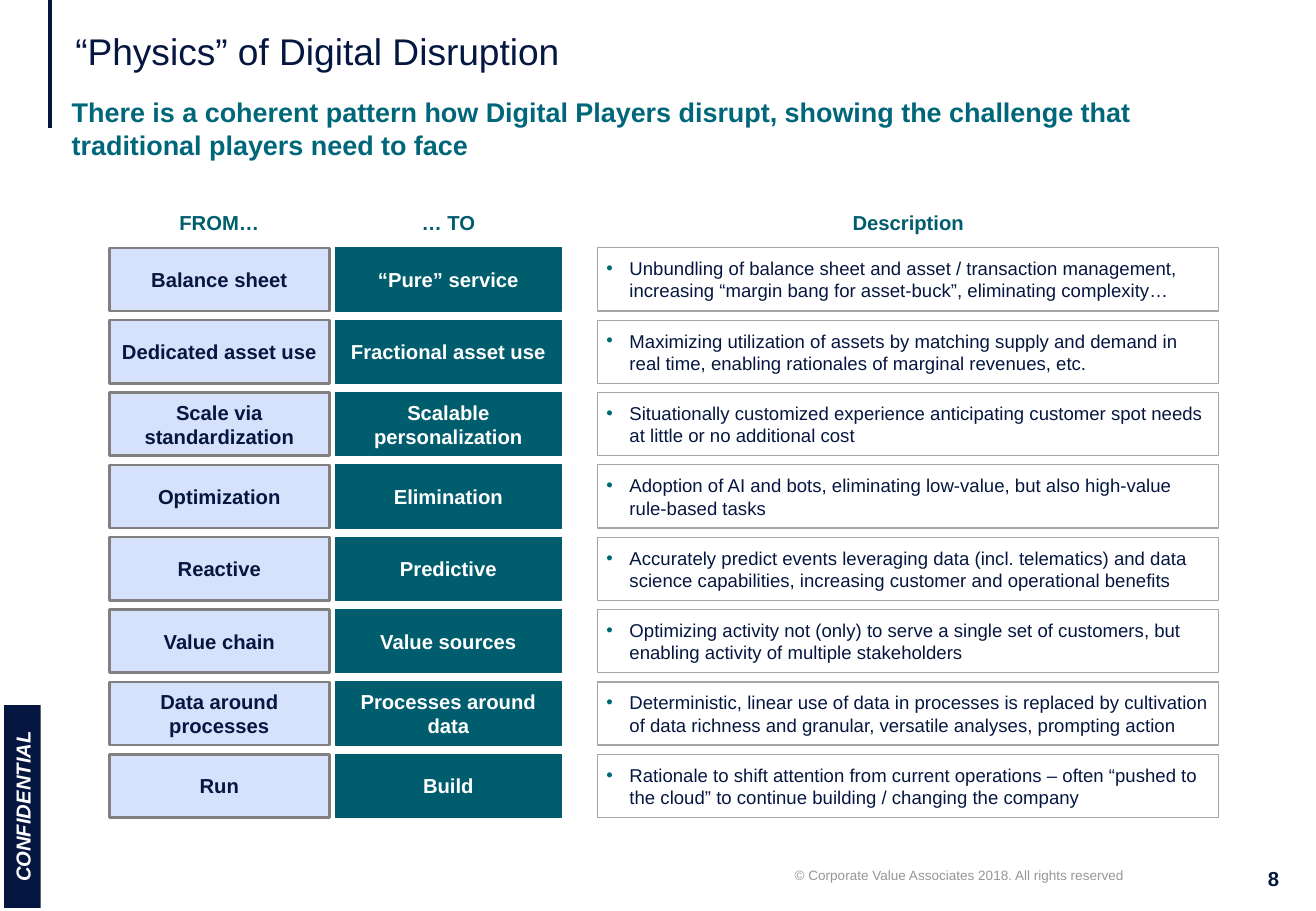
import pptx
import pptx.dml.color
import pptx.enum.shapes
import pptx.enum.text
import pptx.oxml.ns
import pptx.util
import lxml.etree

ALIGN = pptx.enum.text.PP_ALIGN
ANCHOR = pptx.enum.text.MSO_ANCHOR
RECT = pptx.enum.shapes.MSO_SHAPE.RECTANGLE
Inches = pptx.util.Inches

# Colours and type sizes
THEME = {
    "font": "Arial", "navy": "051640", "teal": "005D6E", "accent": "00677A",
    "pale": "D6E1FC", "white": "FFFFFF", "grey": "808080", "rule": "A6A6A6",
    "muted": "969696",
    "title": 22, "subtitle": 16, "label": 12, "text": 11, "footer": 8,
}


def rgb(name):
    return pptx.dml.color.RGBColor.from_string(THEME[name])


def write(sp, text, size="label", color="navy", bold=False, italic=False,
          align=ALIGN.CENTER, anchor=ANCHOR.MIDDLE, insets=(0.1, 0.05, 0.1, 0.05),
          wrap=True, spacing=1.0, bullet=False):
    tf = sp.text_frame
    tf.auto_size = pptx.enum.text.MSO_AUTO_SIZE.NONE
    tf.word_wrap = wrap
    tf.vertical_anchor = anchor
    tf.margin_left, tf.margin_top, tf.margin_right, tf.margin_bottom = map(Inches, insets)
    p = tf.paragraphs[0]
    p.alignment = align
    p.line_spacing = spacing
    p.space_before = 0
    pPr = p._p.get_or_add_pPr()
    indent = Inches(0.19) if bullet else 0
    pPr.set("marL", str(indent))
    pPr.set("indent", str(-indent))
    qn = pptx.oxml.ns.qn
    if bullet:
        buClr = lxml.etree.SubElement(pPr, qn("a:buClr"))
        lxml.etree.SubElement(buClr, qn("a:srgbClr"), val=THEME["accent"])
        lxml.etree.SubElement(pPr, qn("a:buFont"), typeface=THEME["font"])
        lxml.etree.SubElement(pPr, qn("a:buChar"), char="•")
    else:
        lxml.etree.SubElement(pPr, qn("a:buNone"))
    r = p.add_run()
    r.text = text
    r.font.name = THEME["font"]
    r.font.size = pptx.util.Pt(THEME[size])
    r.font.color.rgb = rgb(color)
    r.font.bold = bold
    r.font.italic = italic


prs = pptx.Presentation()
prs.slide_width, prs.slide_height = Inches(10.83), Inches(7.5)
slide = prs.slides.add_slide(prs.slide_layouts[1])
shapes = slide.shapes

# Title and subtitle
title, subtitle = shapes.title, slide.placeholders[1]
title.left, title.top, title.width, title.height = map(Inches, (0.62, 0, 10.08, 0.88))
write(title, "“Physics” of Digital Disruption", size="title", align=ALIGN.LEFT,
      insets=(0, 0.05, 0.1, 0.05), spacing=0.9)
subtitle.left, subtitle.top, subtitle.width, subtitle.height = map(
    Inches, (0.49, 0.74, 9.85, 0.82))
write(subtitle, "There is a coherent pattern how Digital Players disrupt, showing the "
      "challenge that traditional players need to face", size="subtitle",
      color="accent", bold=True, align=ALIGN.LEFT, anchor=ANCHOR.TOP)

# Rule beside the title
rule = shapes.add_connector(pptx.enum.shapes.MSO_CONNECTOR.STRAIGHT,
                            Inches(0.41), 0, Inches(0.41), Inches(1.05))
rule.line.color.rgb = rgb("navy")
rule.line.width = pptx.util.Pt(2.25)
lxml.etree.SubElement(rule._element.spPr, pptx.oxml.ns.qn("a:effectLst"))

# Confidential tab, turned to read upwards
tab = shapes.add_shape(RECT, *map(Inches, (-0.65, 6.49, 1.67, 0.3)))
tab.rotation = 270
tab.shadow.inherit = False
tab.fill.solid()
tab.fill.fore_color.rgb = rgb("navy")
tab.line.fill.background()
write(tab, "CONFIDENTIAL", color="white", bold=True, italic=True)

# Footer and page number
footer = shapes.add_textbox(*map(Inches, (6.2, 7.14, 3.15, 0.23)))
write(footer, "© Corporate Value Associates 2018. All rights reserved", size="footer",
      color="muted", align=ALIGN.RIGHT, anchor=ANCHOR.TOP,
      insets=(0.1, 0, 0.1, 0.05), wrap=False)
number = shapes.add_textbox(*map(Inches, (10.17, 6.97, 0.62, 0.53)))
write(number, "8", bold=True)

# Columns: heading, left, width, fill, line, line width, text format
narrow, wide = (0.03,) * 4, (0.07, 0.04, 0.07, 0.04)
columns = [
    ("FROM…", 0.9, 1.81, "pale", "grey", 1.5, dict(bold=True, insets=narrow)),
    ("… TO", 2.76, 1.86, "teal", "teal", 0.75,
     dict(bold=True, color="white", insets=wide)),
    ("Description", 4.92, 5.11, None, "rule", 0.75,
     dict(size="text", align=ALIGN.LEFT, insets=wide, bullet=True)),
]
rows = [
    ("Balance sheet", "“Pure” service",
     "Unbundling of balance sheet and asset / transaction management, increasing "
     "“margin bang for asset-buck”, eliminating complexity…"),
    ("Dedicated asset use", "Fractional asset use",
     "Maximizing utilization of assets by matching supply and demand in real time, "
     "enabling rationales of marginal revenues, etc."),
    ("Scale via standardization", "Scalable personalization",
     "Situationally customized experience anticipating customer spot needs at little "
     "or no additional cost"),
    ("Optimization", "Elimination",
     "Adoption of AI and bots, eliminating low-value, but also high-value rule-based tasks"),
    ("Reactive", "Predictive",
     "Accurately predict events leveraging data (incl. telematics) and data science "
     "capabilities, increasing customer and operational benefits"),
    ("Value chain", "Value sources",
     "Optimizing activity not (only) to serve a single set of customers, but enabling "
     "activity of multiple stakeholders"),
    ("Data around processes", "Processes around data",
     "Deterministic, linear use of data in processes is replaced by cultivation of data "
     "richness and granular, versatile analyses, prompting action"),
    ("Run", "Build",
     "Rationale to shift attention from current operations – often “pushed to the cloud” "
     "to continue building / changing the company"),
]
first_top, last_top, row_height = 2.04, 6.21, 0.52
pitch = (last_top - first_top) / (len(rows) - 1)

# Grid of boxes under centred headings
for col, (heading, left, width, fill, line, weight, style) in enumerate(columns):
    head = shapes.add_textbox(*map(Inches, (left, 1.68, width, 0.3)))
    write(head, heading, color="teal", bold=True, anchor=ANCHOR.TOP)
    for row, texts in enumerate(rows):
        top = first_top + row * pitch
        box = shapes.add_shape(RECT, *map(Inches, (left, top, width, row_height)))
        box.shadow.inherit = False
        if fill:
            box.fill.solid()
            box.fill.fore_color.rgb = rgb(fill)
        else:
            box.fill.background()
        box.line.color.rgb = rgb(line)
        box.line.width = pptx.util.Pt(weight)
        write(box, texts[col], **style)

prs.save("out.pptx")
